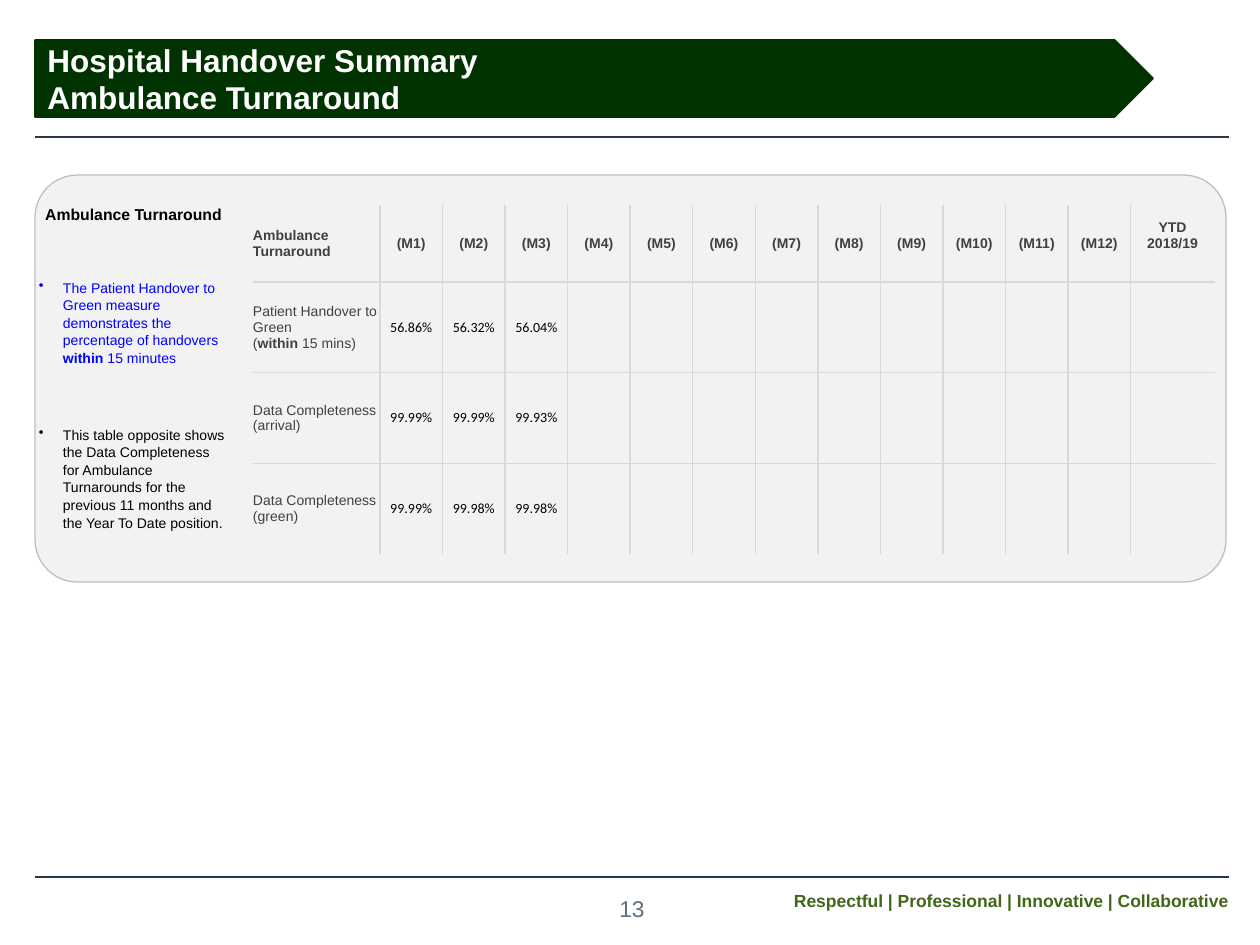
import pptx
import pptx.dml.color
import pptx.enum.shapes
import pptx.enum.text
import pptx.oxml
import pptx.oxml.ns
import pptx.util
from lxml import etree

SCALE = 914400 / 126
ALIGN = pptx.enum.text.PP_ALIGN
ANCHOR = pptx.enum.text.MSO_ANCHOR
SHAPE = pptx.enum.shapes.MSO_SHAPE
BODY = {"name": "Arial", "size": 8, "color": "404040", "bold": False}
FLUSH = {"margin_left": 0, "margin_top": 0, "margin_right": 0, "margin_bottom": 0}
GRID = "D9D9D9"

MONTHS = [f"(M{month})" for month in range(1, 13)]
MEASURES = [
    ([[("Patient Handover to Green", False)],
      [("(", False), ("within ", True), ("15 mins)", False)]],
     ["56.86%", "56.32%", "56.04%"]),
    ([[("Data Completeness (arrival)", False)]], ["99.99%", "99.99%", "99.93%"]),
    ([[("Data Completeness (green)", False)]], ["99.99%", "99.98%", "99.98%"]),
]
NOTES = [
    ([("The Patient Handover to Green measure demonstrates the percentage of handovers ", False),
      ("within", True), (" 15 minutes", False)], "0000FF", 31),
    ([("This table opposite shows the Data Completeness for Ambulance Turnarounds for the "
       "previous 11 months and the Year To Date position.", False)], "000000", 34),
]


def px(length):
    return pptx.util.Emu(round(length * SCALE))


def rgb(color):
    return pptx.dml.color.RGBColor.from_string(color)


def apply(target, values):
    for name, value in values.items():
        setattr(target, name, value)


def style_font(font, look):
    font.color.rgb = rgb(look["color"])
    apply(font, {"name": look["name"], "size": pptx.util.Pt(look["size"]), "bold": look["bold"]})


def write_runs(paragraph, runs, look):
    for text, bold in runs:
        run = paragraph.add_run()
        run.text = text
        style_font(run.font, {**look, "bold": bold})


def write(frame, paragraphs, look, align=ALIGN.LEFT):
    """Fill a text frame with paragraphs, each a list of (text, bold) runs."""
    for index, runs in enumerate(paragraphs):
        paragraph = frame.add_paragraph() if index else frame.paragraphs[0]
        paragraph.alignment = align
        write_runs(paragraph, runs, look)


def add_text_frame(slide, box, wrap=True):
    frame = slide.shapes.add_textbox(*map(px, box)).text_frame
    apply(frame, {**FLUSH, "word_wrap": wrap})
    return frame


def add_panel(slide, kind, box, fill, line, width):
    panel = slide.shapes.add_shape(kind, *map(px, box))
    panel.shadow.inherit = False
    panel.fill.solid()
    panel.fill.fore_color.rgb = rgb(fill)
    panel.line.color.rgb = rgb(line)
    panel.line.width = pptx.util.Pt(width)
    return panel


def add_rule(slide, left, right, y):
    rule = slide.shapes.add_connector(
        pptx.enum.shapes.MSO_CONNECTOR.STRAIGHT, px(left), px(y), px(right), px(y))
    rule.line.color.rgb = rgb("293947")
    rule.line.width = pptx.util.Pt(1)
    etree.SubElement(rule.element.spPr, pptx.oxml.ns.qn("a:effectLst"))


def set_borders(cell, shown):
    """Draw the sides named in shown (from L, R, T, B) and clear the others."""
    namespace = pptx.oxml.ns.nsdecls("a")
    for side in "LRTB":
        paint = (f'<a:solidFill><a:srgbClr val="{GRID}"/></a:solidFill>'
                 if side in shown else "<a:noFill/>")
        cell._tc.get_or_add_tcPr().append(pptx.oxml.parse_xml(
            f'<a:ln{side} {namespace} w="12700">{paint}</a:ln{side}>'))


def add_bullet(paragraph, indent):
    properties = paragraph._p.get_or_add_pPr()
    properties.set("marL", str(px(indent)))
    properties.set("indent", str(-px(indent)))
    etree.SubElement(properties, pptx.oxml.ns.qn("a:buChar")).set("char", "•")


def add_title(slide, box):
    banner = add_panel(slide, SHAPE.PENTAGON, box, "003300", "003300", 1)
    apply(banner.text_frame, {"word_wrap": True, "vertical_anchor": ANCHOR.MIDDLE})
    write(banner.text_frame,
          [[("Hospital Handover Summary", True)], [("Ambulance Turnaround", True)]],
          {**BODY, "size": 18, "color": "FFFFFF"})


def add_turnaround_table(slide, box):
    left, top, width, height = box
    label_width, ytd_width, header_height = 127, 84, 77
    row_count, column_count = len(MEASURES) + 1, len(MONTHS) + 2
    table = slide.shapes.add_table(row_count, column_count, *map(px, box)).table
    apply(table, {"first_row": False, "horz_banding": False})

    month_width = (width - label_width - ytd_width) / len(MONTHS)
    for column, size in zip(table.columns, [label_width, *[month_width] * len(MONTHS), ytd_width]):
        column.width = px(size)
    measure_height = (height - header_height) / len(MEASURES)
    for row, size in zip(table.rows, [header_height, *[measure_height] * len(MEASURES)]):
        row.height = px(size)

    for r in range(row_count):
        for c in range(column_count):
            cell = table.cell(r, c)
            inner = {"L": c > 0, "R": c < column_count - 1, "T": r > 0, "B": r < row_count - 1}
            set_borders(cell, [side for side, shown in inner.items() if shown])
            cell.fill.background()
            apply(cell, {**FLUSH, "vertical_anchor": ANCHOR.MIDDLE})

    write(table.cell(0, 0).text_frame, [[("Ambulance Turnaround", True)]], BODY)
    for c, month in enumerate(MONTHS, 1):
        write(table.cell(0, c).text_frame, [[(month, True)]], BODY, ALIGN.CENTER)
    year_to_date = table.cell(0, column_count - 1)
    year_to_date.margin_bottom = px(16)
    write(year_to_date.text_frame, [[("YTD", True)], [("2018/19", True)]], BODY, ALIGN.CENTER)

    for r, (label, rates) in enumerate(MEASURES, 1):
        write(table.cell(r, 0).text_frame, label, BODY)
        for c, rate in enumerate(rates, 1):
            write(table.cell(r, c).text_frame, [[(rate, False)]],
                  {**BODY, "name": "Calibri", "color": "000000"}, ALIGN.CENTER)


def add_notes_column(slide, box):
    frame = add_text_frame(slide, box)
    write(frame, [[("Ambulance Turnaround", True)]],
          {**BODY, "size": 9, "color": "000000"}, ALIGN.CENTER)
    for runs, color, gap in NOTES:
        note = frame.add_paragraph()
        add_bullet(note, 24)
        apply(note, {"space_before": pptx.util.Pt(gap), "line_spacing": 1.05})
        write_runs(note, runs, {**BODY, "color": color})


def add_turnaround_panel(slide, box):
    left, top, width, height = box
    panel = add_panel(slide, SHAPE.ROUNDED_RECTANGLE, box, "F2F2F2", "BFBFBF", 0.75)
    panel.adjustments[0] = 0.104
    add_turnaround_table(slide, (left + 218, top + 30, 962, 349))
    add_notes_column(slide, (left + 4, top + 30, 189, 349))


def add_footer(slide, box):
    left, top, width, height = box
    add_rule(slide, left, left + width, top)
    number = add_text_frame(slide, (left + 582, top + 15, 30, 32), wrap=False)
    number.vertical_anchor = ANCHOR.MIDDLE
    write(number, [[("13", False)]], {**BODY, "size": 13, "color": "5E707D"}, ALIGN.CENTER)
    values = add_text_frame(slide, (left + width - 451, top + 13, 450, 29))
    write(values, [[("Respectful | Professional | Innovative | Collaborative", True)]],
          {**BODY, "size": 10, "color": "436518"}, ALIGN.RIGHT)


def main():
    deck = pptx.Presentation()
    apply(deck, {"slide_width": px(1260), "slide_height": px(945)})
    slide = deck.slides.add_slide(deck.slide_layouts[6])
    add_rule(slide, 35, 1229, 137)
    add_footer(slide, (35, 877, 1194, 50))
    add_turnaround_panel(slide, (35, 175, 1191, 407))
    add_title(slide, (35, 40, 1118, 77))
    deck.save("out.pptx")


if __name__ == "__main__":
    main()
